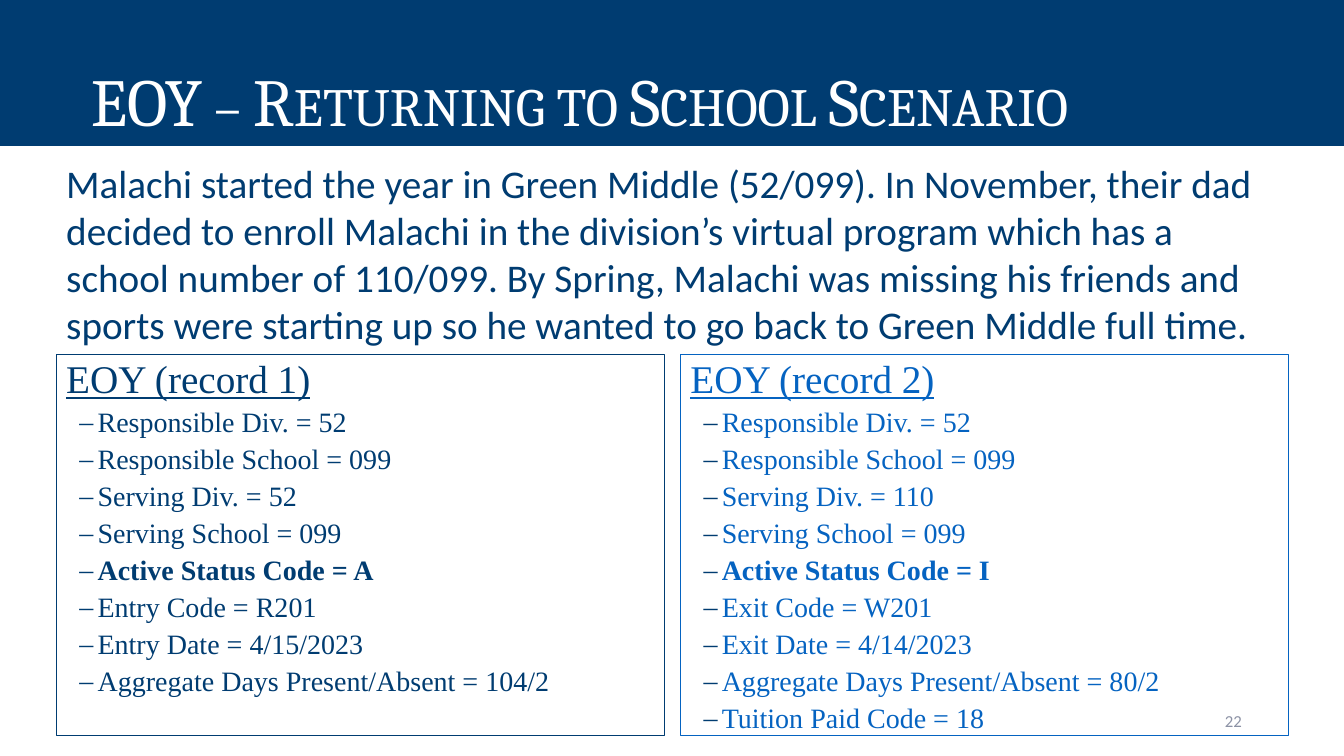
from lxml.etree import SubElement
from pptx import Presentation
from pptx.dml.color import RGBColor
from pptx.enum.shapes import MSO_SHAPE as Kind
from pptx.enum.text import MSO_ANCHOR as Anchor, PP_ALIGN as Align
from pptx.oxml.ns import qn
from pptx.util import Cm, Pt

NAVY = RGBColor(0x00, 0x3C, 0x71)
BLUE = RGBColor(0x05, 0x63, 0xC1)
GREY = RGBColor(0x8C, 0x92, 0xA5)
WHITE = RGBColor(0xFF, 0xFF, 0xFF)
SANS, SERIF, ROMAN = "Calibri", "Cambria", "Times New Roman"

TITLE = "EOY – Returning to School Scenario"
STORY = (
    "Malachi started the year in Green Middle (52/099). In November, their dad "
    "decided to enroll Malachi in the division’s virtual program which has a "
    "school number of 110/099. By Spring, Malachi was missing his friends and "
    "sports were starting up so he wanted to go back to Green Middle full time."
)
CARDS = [
    ("EOY (record 1)", NAVY, [
        "Responsible Div. = 52",
        "Responsible School = 099",
        "Serving Div. = 52",
        "Serving School = 099",
        "Active Status Code = A",
        "Entry Code = R201",
        "Entry Date = 4/15/2023",
        "Aggregate Days Present/Absent = 104/2",
    ]),
    ("EOY (record 2)", BLUE, [
        "Responsible Div. = 52",
        "Responsible School = 099",
        "Serving Div. = 110",
        "Serving School = 099",
        "Active Status Code = I",
        "Exit Code = W201",
        "Exit Date = 4/14/2023",
        "Aggregate Days Present/Absent = 80/2",
        "Tuition Paid Code = 18",
    ]),
]
LEFT, PITCH = 1.42, 15.73


class Deck:
    """Holds the style and the current slide."""

    def __init__(self, wide, high):
        self.prs = Presentation()
        self.prs.slide_width, self.prs.slide_height = Cm(wide), Cm(high)
        self.slide = self.prs.slides.add_slide(self.prs.slide_layouts[6])

    def rect(self, x, y, w, h, fill=None, line=None, anchor=Anchor.TOP):
        box = self.slide.shapes.add_shape(
            Kind.RECTANGLE, Cm(x), Cm(y), Cm(w), Cm(h))
        box.shadow.inherit = False
        if fill is None:
            box.fill.background()
        else:
            box.fill.solid()
            box.fill.fore_color.rgb = fill
        if line is None:
            box.line.fill.background()
        else:
            box.line.color.rgb = line
            box.line.width = Pt(0.75)
        return self.frame(box, anchor)

    def text(self, x, y, w, h, anchor=Anchor.TOP):
        box = self.slide.shapes.add_textbox(Cm(x), Cm(y), Cm(w), Cm(h))
        return self.frame(box, anchor)

    def frame(self, box, anchor):
        frame = box.text_frame
        frame.word_wrap = True
        frame.vertical_anchor = anchor
        return frame

    def para(self, frame, first=False, align=Align.LEFT, lead=1.0, before=0):
        para = frame.paragraphs[0] if first else frame.add_paragraph()
        para.alignment = align
        para.line_spacing = lead
        para.space_before = Pt(before)
        return para

    def run(self, para, words, face, size, color, bold=False, under=False):
        run = para.add_run()
        run.text = words
        font = run.font
        font.name, font.size, font.bold = face, Pt(size), bold
        font.underline = under
        font.color.rgb = color
        return run

    def dash(self, para, color):
        props = para._p.get_or_add_pPr()
        props.set("marL", str(Cm(0.79)))
        props.set("indent", str(Cm(-0.46)))
        tint = SubElement(props, qn("a:buClr"))
        SubElement(tint, qn("a:srgbClr")).set("val", str(color))
        SubElement(props, qn("a:buFont")).set("typeface", ROMAN)
        SubElement(props, qn("a:buChar")).set("char", "–")

    def card(self, x, head, color, rows):
        frame = self.rect(x, 8.94, 15.32, 9.6, line=color)
        para = self.para(frame, first=True, lead=0.9)
        self.run(para, head, ROMAN, 28, color, under=True)
        for row in rows:
            para = self.para(frame, lead=0.9, before=4.8)
            para.level = 1
            self.dash(para, NAVY)
            self.run(para, row, ROMAN, 20, color,
                     bold=row.startswith("Active"))


def main():
    deck = Deck(33.87, 19.05)

    # Title band
    band = deck.rect(0, 0, 33.87, 3.68, fill=NAVY, anchor=Anchor.BOTTOM)
    band.margin_left = Cm(2.29)
    para = deck.para(band, first=True, lead=0.9)
    title = deck.run(para, TITLE, SERIF, 48, WHITE)
    title.font._element.set("cap", "small")

    # Page number
    page = deck.text(23.93, 17.65, 7.62, 1.02, Anchor.MIDDLE)
    para = deck.para(page, first=True, align=Align.RIGHT)
    deck.run(para, "22", SANS, 12, GREY)

    # Record cards
    for i, (head, color, rows) in enumerate(CARDS):
        deck.card(LEFT + i * PITCH, head, color, rows)

    # Scenario text
    story = deck.text(LEFT, 3.89, 31.04, 5.05)
    para = deck.para(story, first=True)
    deck.run(para, STORY, SANS, 28, NAVY)

    deck.prs.save("out.pptx")


if __name__ == "__main__":
    main()
